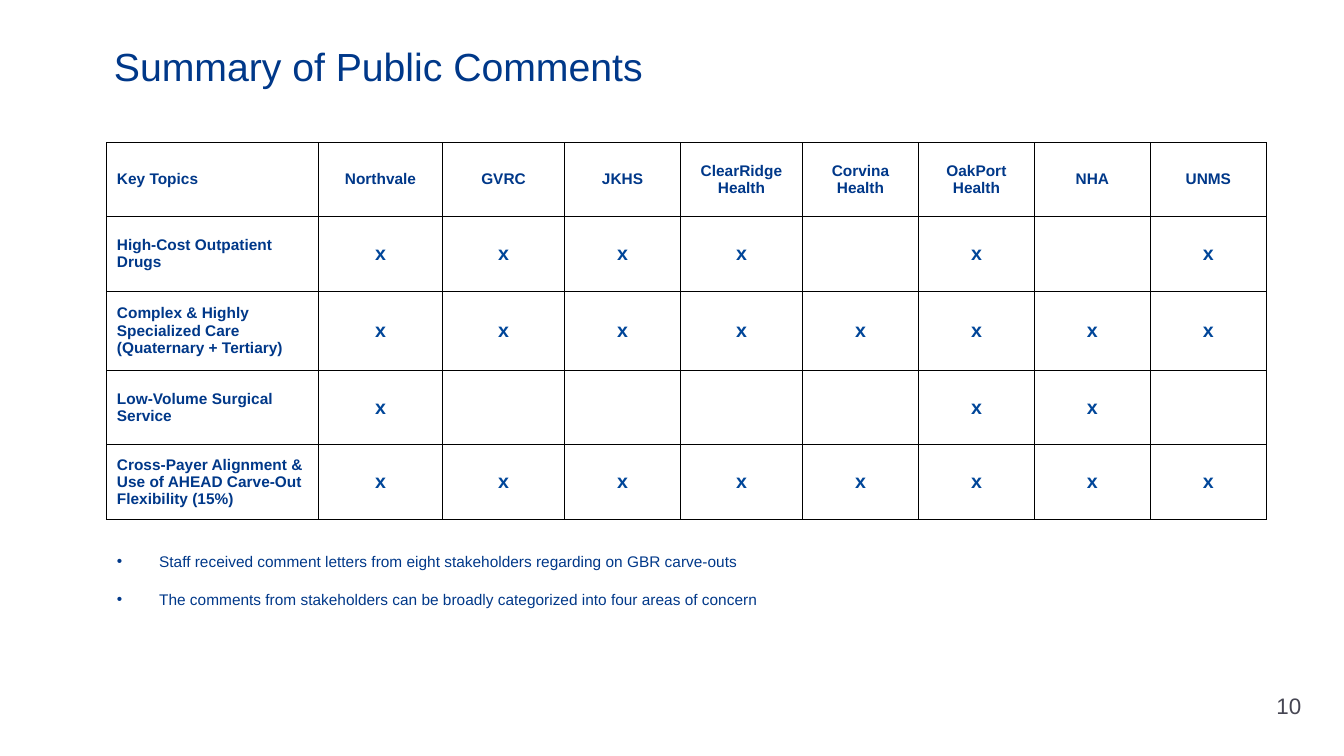
"""Build the slide that summarises public comments by stakeholder."""

from dataclasses import dataclass

import lxml.etree
import pptx
import pptx.dml.color
import pptx.enum.text
import pptx.oxml
import pptx.oxml.ns
import pptx.util

NAVY = pptx.dml.color.RGBColor(0x00, 0x38, 0x89)
MARK_BLUE = pptx.dml.color.RGBColor(0x00, 0x46, 0x99)
GRAY = pptx.dml.color.RGBColor(0x46, 0x46, 0x53)
WHITE = pptx.dml.color.RGBColor(0xFF, 0xFF, 0xFF)
BLACK = pptx.dml.color.RGBColor(0x00, 0x00, 0x00)

FONT = "Arial"
SLIDE_WIDTH = pptx.util.Inches(13.33)
SLIDE_HEIGHT = pptx.util.Inches(7.5)
LEFT_MARGIN = 7.95
CONTENT_WIDTH = 86.27
BORDER_WIDTH = pptx.util.Pt(0.75)
MIDDLE = pptx.enum.text.MSO_ANCHOR.MIDDLE
TOP = pptx.enum.text.MSO_ANCHOR.TOP
CENTER = pptx.enum.text.PP_ALIGN.CENTER
LEFT = pptx.enum.text.PP_ALIGN.LEFT


@dataclass(frozen=True)
class Area:
    left: float
    top: float
    width: float
    height: float


@dataclass(frozen=True)
class TextStyle:
    size: float
    color: pptx.dml.color.RGBColor
    bold: bool = False


@dataclass(frozen=True)
class Column:
    heading: str
    width: float


@dataclass(frozen=True)
class Topic:
    name: str
    height: float
    marks: str


LABEL = TextStyle(11, NAVY, True)
MARK = TextStyle(14, MARK_BLUE, True)
BODY = TextStyle(11, NAVY)

COLUMNS = (
    Column("Key Topics", 15.75),
    Column("Northvale", 9.23),
    Column("GVRC", 9.08),
    Column("JKHS", 8.63),
    Column("ClearRidge Health", 9.08),
    Column("Corvina Health", 8.63),
    Column("OakPort Health", 8.63),
    Column("NHA", 8.63),
    Column("UNMS", 8.63),
)
HEADING_HEIGHT = 9.8
TOPICS = (
    Topic("High‑Cost Outpatient Drugs", 9.87, "xxxx-x-x"),
    Topic("Complex & Highly Specialized Care (Quaternary + Tertiary)", 10.45, "xxxxxxxx"),
    Topic("Low‑Volume Surgical Service", 9.87, "x----xx-"),
    Topic("Cross‑Payer Alignment & Use of AHEAD Carve‑Out Flexibility (15%)", 9.87, "xxxxxxxx"),
)
REMARKS = (
    "Staff received comment letters from eight stakeholders regarding on GBR carve-outs",
    "The comments from stakeholders can be broadly categorized into four areas of concern",
)


def across(percent: float) -> int:
    """Return a share of the slide width."""
    return round(SLIDE_WIDTH * percent / 100)


def down(percent: float) -> int:
    """Return a share of the slide height."""
    return round(SLIDE_HEIGHT * percent / 100)


def place(area: Area) -> tuple[int, int, int, int]:
    """Return left, top, width and height of an area."""
    return across(area.left), down(area.top), across(area.width), down(area.height)


def add_run(paragraph, text: str, style: TextStyle) -> None:
    """Add one styled run to a paragraph."""
    run = paragraph.add_run()
    run.text = text
    run.font.name = FONT
    run.font.size = pptx.util.Pt(style.size)
    run.font.bold = style.bold
    run.font.color.rgb = style.color


def add_text_frame(slide, area: Area, inset: tuple[float, float], anchor):
    """Add a wrapping text box and return its text frame."""
    frame = slide.shapes.add_textbox(*place(area)).text_frame
    frame.word_wrap = True
    frame.vertical_anchor = anchor
    frame.margin_left = frame.margin_right = pptx.util.Inches(inset[0])
    frame.margin_top = frame.margin_bottom = pptx.util.Inches(inset[1])
    return frame


def add_bullet(paragraph) -> None:
    """Give a paragraph a navy bullet with a hanging indent."""
    properties = paragraph._p.get_or_add_pPr()
    indent = pptx.util.Inches(0.42)
    properties.set("marL", str(indent))
    properties.set("indent", str(-indent))
    color = lxml.etree.SubElement(properties, pptx.oxml.ns.qn("a:buClr"))
    lxml.etree.SubElement(color, pptx.oxml.ns.qn("a:srgbClr"), val=str(NAVY))
    lxml.etree.SubElement(properties, pptx.oxml.ns.qn("a:buFont"), typeface=FONT)
    lxml.etree.SubElement(properties, pptx.oxml.ns.qn("a:buChar"), char="•")


def frame_cell(cell) -> None:
    """Draw the four borders of a cell and fill it white."""
    properties = cell._tc.get_or_add_tcPr()
    for side in ("a:lnL", "a:lnR", "a:lnT", "a:lnB"):
        line = lxml.etree.SubElement(properties, pptx.oxml.ns.qn(side), w=str(BORDER_WIDTH))
        fill = lxml.etree.SubElement(line, pptx.oxml.ns.qn("a:solidFill"))
        lxml.etree.SubElement(fill, pptx.oxml.ns.qn("a:srgbClr"), val=str(BLACK))
    cell.fill.solid()
    cell.fill.fore_color.rgb = WHITE


def fill_cell(cell, text: str, style: TextStyle, alignment) -> None:
    """Frame a cell and write its text."""
    frame_cell(cell)
    cell.vertical_anchor = MIDDLE
    paragraph = cell.text_frame.paragraphs[0]
    paragraph.alignment = alignment
    if text:
        add_run(paragraph, text, style)


def add_topic_table(slide) -> None:
    """Add the table of topics and stakeholders."""
    heights = [HEADING_HEIGHT, *(topic.height for topic in TOPICS)]
    area = Area(LEFT_MARGIN, 18.85, sum(column.width for column in COLUMNS), sum(heights))
    table = slide.shapes.add_table(len(heights), len(COLUMNS), *place(area)).table
    table.first_row = False
    table.horz_banding = False
    for row, height in zip(table.rows, heights):
        row.height = down(height)
    for index, column in enumerate(COLUMNS):
        table.columns[index].width = across(column.width)
        fill_cell(table.cell(0, index), column.heading, LABEL, CENTER if index else LEFT)
    for row_index, topic in enumerate(TOPICS, start=1):
        fill_cell(table.cell(row_index, 0), topic.name, LABEL, LEFT)
        for column_index, mark in enumerate(topic.marks, start=1):
            text = mark.replace("-", "")
            fill_cell(table.cell(row_index, column_index), text, MARK, CENTER)


def add_remarks(slide) -> None:
    """Add the bulleted remarks below the table."""
    frame = add_text_frame(slide, Area(LEFT_MARGIN, 72.4, 87.62, 8.8), (0.1, 0.05), TOP)
    for index, remark in enumerate(REMARKS):
        paragraph = frame.add_paragraph() if index else frame.paragraphs[0]
        add_bullet(paragraph)
        if index:
            paragraph.space_before = pptx.util.Pt(14)
        add_run(paragraph, remark, BODY)


def main() -> None:
    """Build and save the presentation."""
    presentation = pptx.Presentation()
    presentation.slide_width = SLIDE_WIDTH
    presentation.slide_height = SLIDE_HEIGHT
    slide = presentation.slides.add_slide(presentation.slide_layouts[6])
    number = add_text_frame(slide, Area(94.45, 90.67, 4.73, 5.33), (0.07, 0.04), MIDDLE)
    add_run(number.paragraphs[0], "10", TextStyle(16, GRAY))
    title = add_text_frame(slide, Area(LEFT_MARGIN, 5.07, CONTENT_WIDTH, 7.6), (0.07, 0.04), TOP)
    add_run(title.paragraphs[0], "Summary of Public Comments", TextStyle(28, NAVY))
    add_topic_table(slide)
    add_remarks(slide)
    presentation.save("out.pptx")


if __name__ == "__main__":
    main()
